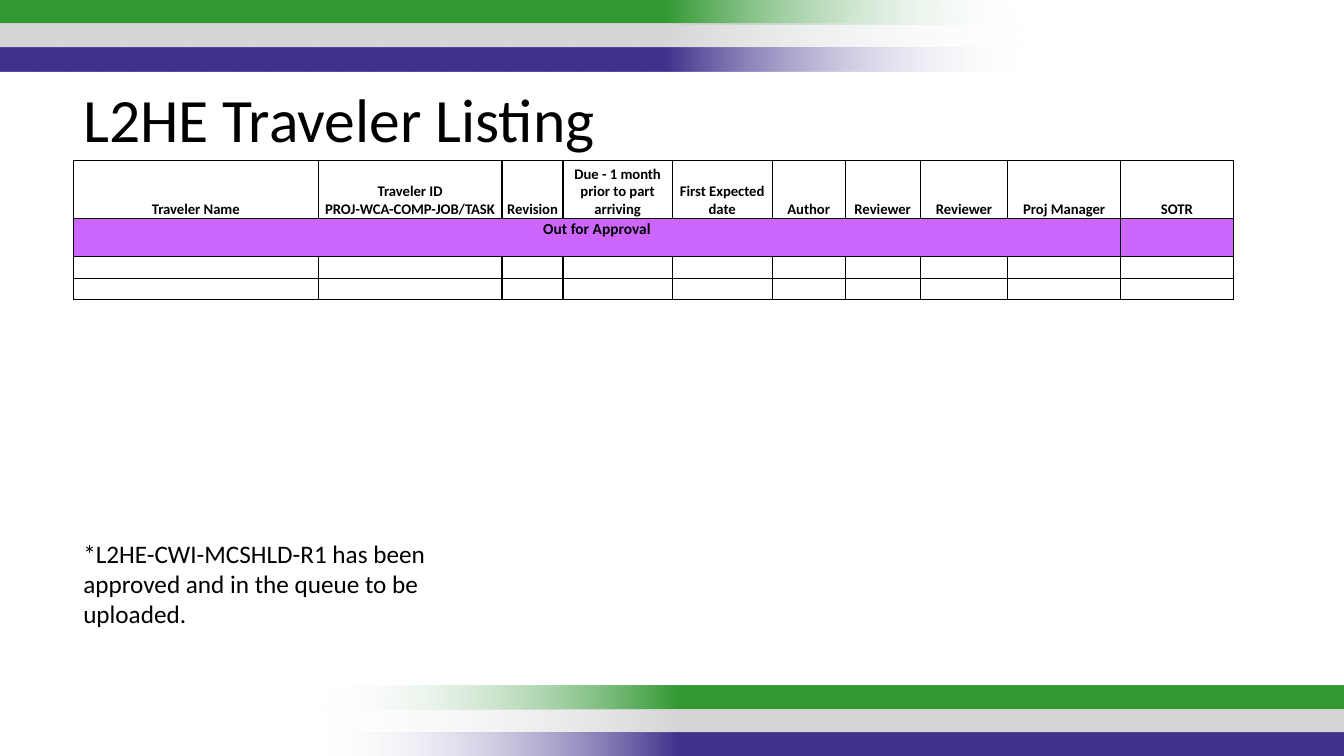
from pptx import Presentation
from pptx.dml.color import RGBColor
from pptx.enum.shapes import MSO_SHAPE
from pptx.enum.text import MSO_ANCHOR, MSO_AUTO_SIZE, PP_ALIGN
from pptx.oxml import parse_xml
from pptx.oxml.ns import nsdecls
from pptx.util import Cm, Pt

FONT = "Calibri"
BLACK = RGBColor(0x00, 0x00, 0x00)
WHITE = RGBColor(0xFF, 0xFF, 0xFF)
PURPLE = RGBColor(0xCC, 0x66, 0xFF)
PALE = RGBColor(0xF7, 0xFA, 0xFD)
GREEN = RGBColor(0x33, 0x99, 0x33)
GREY = RGBColor(0xD6, 0xD6, 0xD6)
INDIGO = RGBColor(0x42, 0x31, 0x8C)

TITLE = "L2HE Traveler Listing"
NOTE = "*L2HE-CWI-MCSHLD-R1 has been approved and in the queue to be uploaded."
COLUMNS = [
    ("Traveler Name", 6.17),
    ("Traveler ID\vPROJ-WCA-COMP-JOB/TASK", 4.63),
    ("Revision", 1.54),
    ("Due - 1 month prior to part arriving", 2.75),
    ("First Expected date", 2.52),
    ("Author", 1.84),
    ("Reviewer", 1.89),
    ("Reviewer", 2.21),
    ("Proj Manager", 2.84),
    ("SOTR", 2.84),
]
ROW_HEIGHTS = [1.46, 0.96, 0.54, 0.54]
STATUS = "Out for Approval"
STATUS_ROW = 1
STATUS_SPAN = 9

STRIPES = [GREEN, GREY, INDIGO]
STRIPE_W, STRIPE_H, STRIPE_STEP = 25.83, 0.61, 0.6
BANDS = [(-0.03, 0, 180), (8.07, 17.27, 0)]


def add_stripe(slide, left, top, rotation, color):
    sp = slide.shapes.add_shape(
        MSO_SHAPE.RECTANGLE, Cm(left), Cm(top), Cm(STRIPE_W), Cm(STRIPE_H))
    sp.shadow.inherit = False
    sp.rotation = rotation
    sp.fill.background()
    sp.line.fill.background()
    no_fill = sp._element.spPr.find("{*}noFill")
    no_fill.getparent().replace(no_fill, parse_xml(
        f'<a:gradFill {nsdecls("a")} rotWithShape="1"><a:gsLst>'
        f'<a:gs pos="0"><a:srgbClr val="{PALE}"><a:alpha val="0"/></a:srgbClr></a:gs>'
        f'<a:gs pos="35000"><a:srgbClr val="{color}"/></a:gs>'
        f'<a:gs pos="100000"><a:srgbClr val="{color}"/></a:gs>'
        '</a:gsLst><a:lin ang="0" scaled="0"/></a:gradFill>'))


def add_text(slide, text, left, top, width, height, size):
    tf = slide.shapes.add_textbox(Cm(left), Cm(top), Cm(width), Cm(height)).text_frame
    tf.word_wrap = True
    tf.auto_size = MSO_AUTO_SIZE.SHAPE_TO_FIT_TEXT
    p = tf.paragraphs[0]
    p.text = text
    style(p, size)


def style(p, size, bold=False):
    p.font.name = FONT
    p.font.size = Pt(size)
    p.font.bold = bold
    p.font.color.rgb = BLACK


def format_cell(cell, text, size, fill, anchor):
    cell.margin_left = cell.margin_right = cell.margin_top = Cm(0.02)
    cell.margin_bottom = 0
    cell.vertical_anchor = anchor
    for side in ("lnL", "lnR", "lnT", "lnB"):
        cell._tc.get_or_add_tcPr().append(parse_xml(
            f'<a:{side} {nsdecls("a")} w="{Pt(1)}"><a:solidFill>'
            f'<a:srgbClr val="{BLACK}"/></a:solidFill></a:{side}>'))
    cell.fill.solid()
    cell.fill.fore_color.rgb = fill
    p = cell.text_frame.paragraphs[0]
    p.text = text
    p.alignment = PP_ALIGN.CENTER
    style(p, size, bold=True)
    if not text:
        p._p.get_or_add_endParaRPr().set("sz", str(int(size * 100)))


def add_listing(slide):
    widths = [width for _, width in COLUMNS]
    table = slide.shapes.add_table(
        len(ROW_HEIGHTS), len(COLUMNS), Cm(1.85), Cm(4.05),
        Cm(sum(widths)), Cm(sum(ROW_HEIGHTS))).table
    table.first_row = table.horz_banding = False
    for col, width in zip(table.columns, widths):
        col.width = Cm(width)
    for r, height in enumerate(ROW_HEIGHTS):
        table.rows[r].height = Cm(height)
        for c, (heading, _) in enumerate(COLUMNS):
            cell = table.cell(r, c)
            if r == STATUS_ROW:
                format_cell(cell, "" if c else STATUS, 11, PURPLE, MSO_ANCHOR.TOP)
            else:
                format_cell(cell, "" if r else heading, 10.5, WHITE, MSO_ANCHOR.BOTTOM)
    table.cell(STATUS_ROW, 0).merge(table.cell(STATUS_ROW, STATUS_SPAN - 1))


def main():
    prs = Presentation()
    prs.slide_width, prs.slide_height = Cm(33.87), Cm(19.05)
    slide = prs.slides.add_slide(prs.slide_layouts[6])
    for left, top, rotation in BANDS:
        for i, color in enumerate(STRIPES):
            add_stripe(slide, left, top + i * STRIPE_STEP, rotation, color)
    add_listing(slide)
    add_text(slide, TITLE, 1.85, 1.91, 26.19, 2.13, 44)
    add_text(slide, NOTE, 1.85, 13.44, 9.88, 2.57, 18)
    prs.save("out.pptx")


if __name__ == "__main__":
    main()
